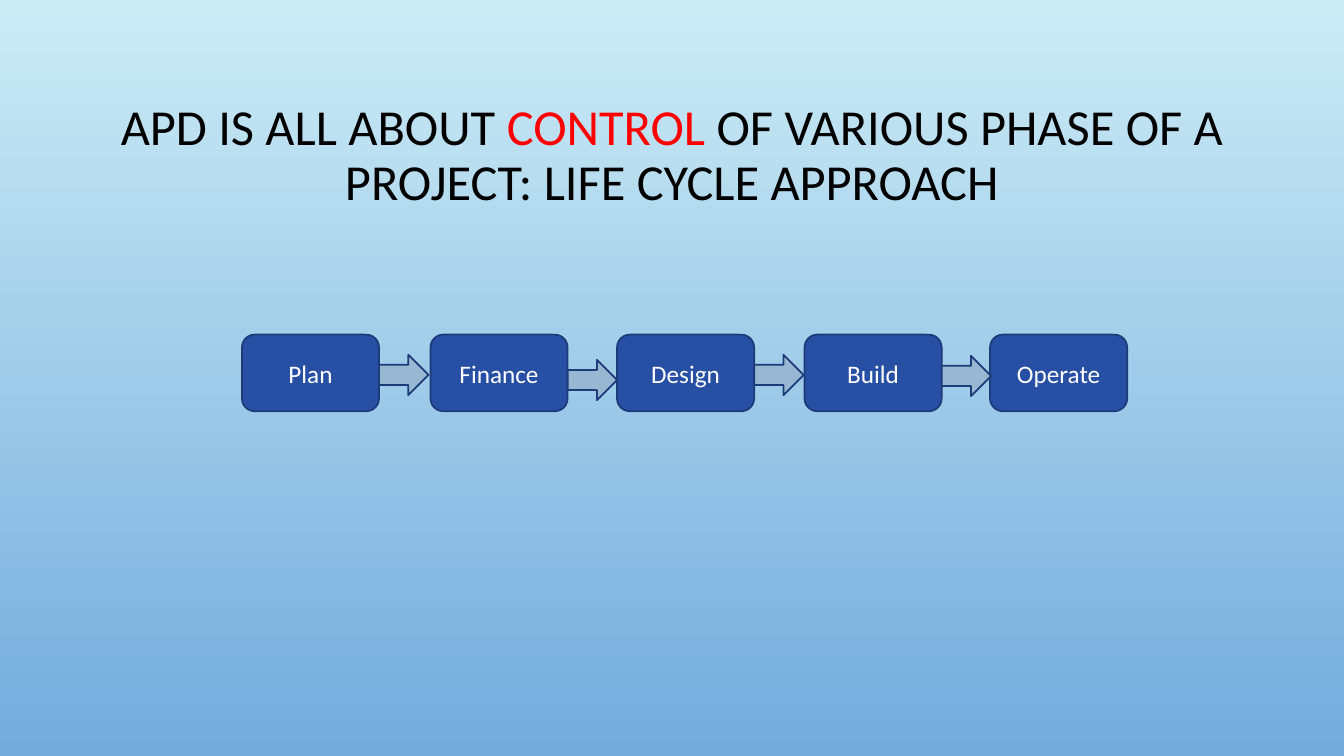
from pptx import Presentation
from pptx.dml.color import RGBColor as Rgb
from pptx.enum.shapes import MSO_SHAPE as Shape
from pptx.enum.text import MSO_ANCHOR as Anchor, PP_ALIGN as Align
from pptx.util import Inches, Pt

COLOURS = {
    "sky": "CBECF5", "deep sky": "73ABDD", "black": "000000", "red": "FF0000",
    "white": "FFFFFF", "box": "274FA4", "arrow": "98B7D3", "outline": "1D3A79",
}
BOX_TOP, BOX_WIDTH, BOX_HEIGHT = 3.32, 1.36, 0.76
ARROW_WIDTH, ARROW_HEIGHT = 0.49, 0.4

# Phase name, left of its box, top of the arrow that follows it
PHASES = [
    ("Plan", 2.4, 3.52),
    ("Finance", 4.27, 3.57),
    ("Design", 6.12, 3.52),
    ("Build", 7.98, 3.53),
    ("Operate", 9.82, None),
]


def colour(name):
    return Rgb.from_string(COLOURS[name])


class SlideBuilder:
    """Holds the style and the current slide."""

    font_name = "Calibri"

    def __init__(self, deck):
        self.page = deck.slides.add_slide(deck.slide_layouts[5])

    def background(self, *names):
        fill = self.page.background.fill
        fill.gradient()
        fill.gradient_angle = 270
        for position, (stop, name) in enumerate(zip(fill.gradient_stops, names)):
            stop.position = position
            stop.color.rgb = colour(name)

    def add_text(self, frame, spans, size, line_spacing=1.0):
        values = {"word_wrap": True, "vertical_anchor": Anchor.MIDDLE}
        for key, value in values.items():
            setattr(frame, key, value)
        para = frame.paragraphs[0]
        for key, value in {"alignment": Align.CENTER, "line_spacing": line_spacing}.items():
            setattr(para, key, value)
        for text, name in spans:
            span = para.add_run()
            span.text = text
            for key, value in {"name": self.font_name, "size": Pt(size)}.items():
                setattr(span.font, key, value)
            span.font.color.rgb = colour(name)

    def title(self, spans, left, top, width, height):
        title = self.page.shapes.title
        place = {"left": left, "top": top, "width": width, "height": height}
        for key, value in place.items():
            setattr(title, key, Inches(value))
        self.add_text(title.text_frame, spans, 36, 0.9)

    def shape(self, kind, left, top, width, height, fill):
        shape = self.page.shapes.add_shape(kind, *map(Inches, (left, top, width, height)))
        shape.shadow.inherit = False
        shape.fill.solid()
        shape.fill.fore_color.rgb = colour(fill)
        shape.line.color.rgb = colour("outline")
        shape.line.width = Pt(1.25)
        return shape

    def phase(self, name, left):
        box = self.shape(Shape.ROUNDED_RECTANGLE, left, BOX_TOP, BOX_WIDTH, BOX_HEIGHT, "box")
        self.add_text(box.text_frame, [(name, "white")], 18)

    def arrow(self, left, top):
        self.shape(Shape.RIGHT_ARROW, left, top, ARROW_WIDTH, ARROW_HEIGHT, "arrow")


def main():
    deck = Presentation()
    deck.slide_width, deck.slide_height = Inches(13.33), Inches(7.5)
    builder = SlideBuilder(deck)

    # Background and title
    builder.background("sky", "deep sky")
    builder.title([
        ("APD IS ALL ABOUT ", "black"),
        ("CONTROL ", "red"),
        ("OF VARIOUS PHASE OF A PROJECT: LIFE CYCLE APPROACH", "black"),
    ], 1, 0.68, 11.33, 1.75)

    # Life cycle: the boxes, then an arrow from each to the next
    for name, left, _ in PHASES:
        builder.phase(name, left)
    for _, left, arrow_top in PHASES[:-1]:
        builder.arrow(left + BOX_WIDTH, arrow_top)

    deck.save("out.pptx")


if __name__ == "__main__":
    main()
